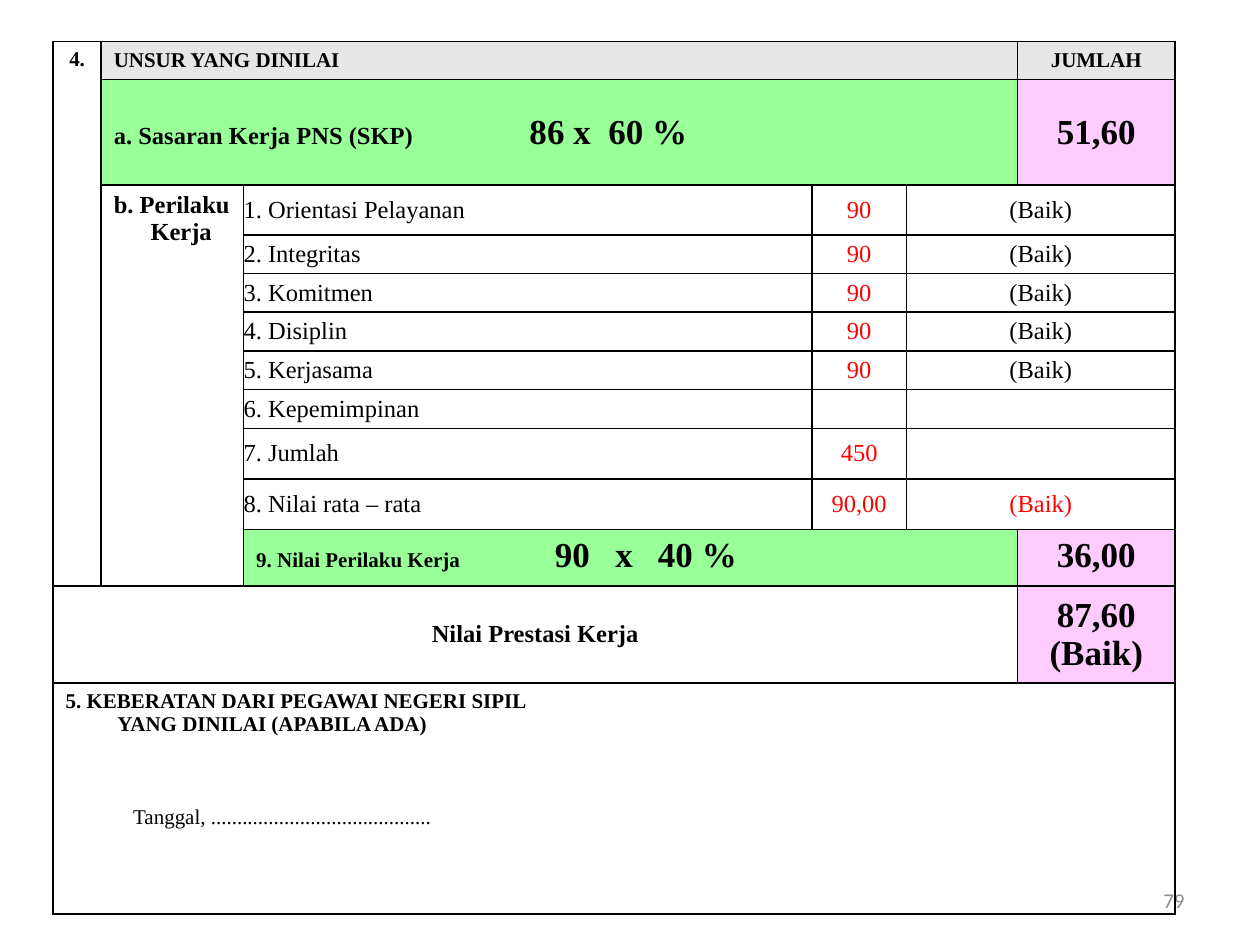
from lxml import etree
from pptx import Presentation
from pptx.dml.color import RGBColor
from pptx.enum.text import MSO_ANCHOR as ANCHOR, PP_ALIGN as ALIGN
from pptx.oxml.ns import qn
from pptx.util import Cm, Pt

BLACK = RGBColor(0x00, 0x00, 0x00)
RED = RGBColor(0xFF, 0x00, 0x00)
GREY = RGBColor(0x8C, 0x8C, 0x8C)
HEADER = RGBColor(0xE6, 0xE6, 0xE6)
GREEN = RGBColor(0x99, 0xFF, 0x99)
PINK = RGBColor(0xFF, 0xCC, 0xFF)

SERIF = "Times New Roman"
COLUMNS = [0.97, 2.87, 11.46, 1.9, 2.24, 3.18]
ROWS = [0.76, 2.13, 1.0] + [0.78] * 5 + [1.02, 1.02, 1.14, 1.96, 4.65]
BEHAVIOURS = [
    ("1. Orientasi Pelayanan", "90", "(Baik)"),
    ("2. Integritas", "90", "(Baik)"),
    ("3. Komitmen", "90", "(Baik)"),
    ("4. Disiplin", "90", "(Baik)"),
    ("5. Kerjasama", "90", "(Baik)"),
    ("6. Kepemimpinan", "", ""),
    ("7. Jumlah", "450", ""),
    ("8. Nilai rata – rata", "90,00", "(Baik)"),
]


def format_run(r, size, color=BLACK, bold=False, font=SERIF):
    r.font.name = font
    r.font.size = Pt(size)
    r.font.bold = bold
    r.font.color.rgb = color


def write(cell, text, size=14, align=ALIGN.LEFT, anchor=ANCHOR.MIDDLE,
          color=BLACK, bold=True, fill=None):
    cell.text_frame.text = text
    cell.vertical_anchor = anchor
    if fill is not None:
        cell.fill.solid()
        cell.fill.fore_color.rgb = fill
    for p in cell.text_frame.paragraphs:
        p.alignment = align
        for r in p.runs:
            format_run(r, size, color, bold)
        if not p.runs:
            # Keeps an empty cell from stretching its row
            etree.SubElement(p._p, qn("a:endParaRPr"), sz=str(size * 100))


def write_behaviour(cell, text, **options):
    cell.margin_left = cell.margin_right = 0
    cell.margin_top = cell.margin_bottom = 0
    write(cell, text, bold=False, **options)


def add_formula(cell, text, stops):
    """Append a large formula whose parts sit on tab stops given in cm."""
    p = cell.text_frame.paragraphs[0]
    r = p.add_run()
    r.text = text
    format_run(r, 20, bold=True)
    tabs = etree.SubElement(p._p.get_or_add_pPr(), qn("a:tabLst"))
    for stop in stops:
        etree.SubElement(tabs, qn("a:tab"), pos=str(Cm(stop)), algn="l")


def set_indent(p, left, first=0):
    pPr = p._p.get_or_add_pPr()
    pPr.set("marL", str(Cm(left)))
    pPr.set("indent", str(Cm(first)))


def set_borders(cell):
    tcPr = cell._tc.get_or_add_tcPr()
    for i, side in enumerate(("lnL", "lnR", "lnT", "lnB")):
        ln = etree.Element(qn(f"a:{side}"), w=str(Pt(1)))
        solid = etree.SubElement(ln, qn("a:solidFill"))
        etree.SubElement(solid, qn("a:srgbClr"), val=str(BLACK))
        tcPr.insert(i, ln)


def add_page_number(s):
    tf = s.shapes.add_textbox(Cm(18.2), Cm(17.65), Cm(5.93), Cm(1.01)).text_frame
    tf.word_wrap = True
    tf.vertical_anchor = ANCHOR.MIDDLE
    tf.text = "79"
    tf.paragraphs[0].alignment = ALIGN.RIGHT
    format_run(tf.paragraphs[0].runs[0], 12, GREY, font="Calibri")


def add_grid(s):
    table = s.shapes.add_table(len(ROWS), len(COLUMNS), Cm(1.07), Cm(0.84),
                               Cm(sum(COLUMNS)), Cm(sum(ROWS))).table
    table.first_row = table.horz_banding = False
    for column, width in zip(table.columns, COLUMNS):
        column.width = Cm(width)
    for row, height in zip(table.rows, ROWS):
        row.height = Cm(height)
    for cell in table.iter_cells():
        cell.fill.background()
        set_borders(cell)
    spans = [(0, 0, 10, 0), (0, 1, 0, 4), (1, 1, 1, 4), (2, 1, 10, 1),
             (10, 2, 10, 4), (11, 0, 11, 4), (12, 0, 12, 5)]
    spans += [(row, 4, row, 5) for row in range(2, 10)]
    for top, left, bottom, right in spans:
        table.cell(top, left).merge(table.cell(bottom, right))
    return table


def fill_scores(table):
    cell = table.cell
    write(cell(0, 0), "4.", 12, ALIGN.CENTER, ANCHOR.TOP)
    write(cell(0, 1), "UNSUR YANG DINILAI", 12, fill=HEADER)
    write(cell(0, 5), "JUMLAH", 12, ALIGN.CENTER, fill=HEADER)

    write(cell(1, 1), "a. Sasaran Kerja PNS (SKP)", fill=GREEN)
    add_formula(cell(1, 1), "\t86 x\t60 %", [8.38, 9.97])
    write(cell(10, 2), "9. Nilai Perilaku Kerja", 12, anchor=ANCHOR.TOP, fill=GREEN)
    add_formula(cell(10, 2), "\t90\tx\t40 %", [6.02, 7.24, 8.1])
    write(cell(11, 0), "Nilai Prestasi Kerja", align=ALIGN.CENTER)

    totals = [(1, "51,60", ANCHOR.MIDDLE), (10, "36,00", ANCHOR.TOP),
              (11, "87,60\n(Baik)", ANCHOR.MIDDLE)]
    for row, text, anchor in totals:
        write(cell(row, 5), text, 20, ALIGN.CENTER, anchor, fill=PINK)


def fill_behaviours(table):
    heading = table.cell(2, 1)
    write(heading, "b. Perilaku Kerja", anchor=ANCHOR.TOP)
    set_indent(heading.text_frame.paragraphs[0], 0.74, -0.74)
    for row, (name, score, grade) in enumerate(BEHAVIOURS, start=2):
        grade_color = RED if score == "90,00" else BLACK
        write_behaviour(table.cell(row, 2), name)
        write_behaviour(table.cell(row, 3), score, align=ALIGN.CENTER, color=RED)
        write_behaviour(table.cell(row, 4), grade, align=ALIGN.CENTER, color=grade_color)


def fill_objection(table):
    cell = table.cell(12, 0)
    write(cell, "5. KEBERATAN DARI PEGAWAI NEGERI SIPIL\n"
                "YANG DINILAI (APABILA ADA)\n"
                "Tanggal, " + "." * 42, 12, anchor=ANCHOR.TOP)
    _, subtitle, date = cell.text_frame.paragraphs
    set_indent(subtitle, 1.04)
    set_indent(date, 1.36)
    date.space_before = Pt(40)
    date.runs[0].font.bold = False


def main():
    prs = Presentation()
    prs.slide_width, prs.slide_height = Cm(25.4), Cm(19.05)
    s = prs.slides.add_slide(prs.slide_layouts[6])
    add_page_number(s)
    table = add_grid(s)
    fill_scores(table)
    fill_behaviours(table)
    fill_objection(table)
    prs.save("out.pptx")


if __name__ == "__main__":
    main()
